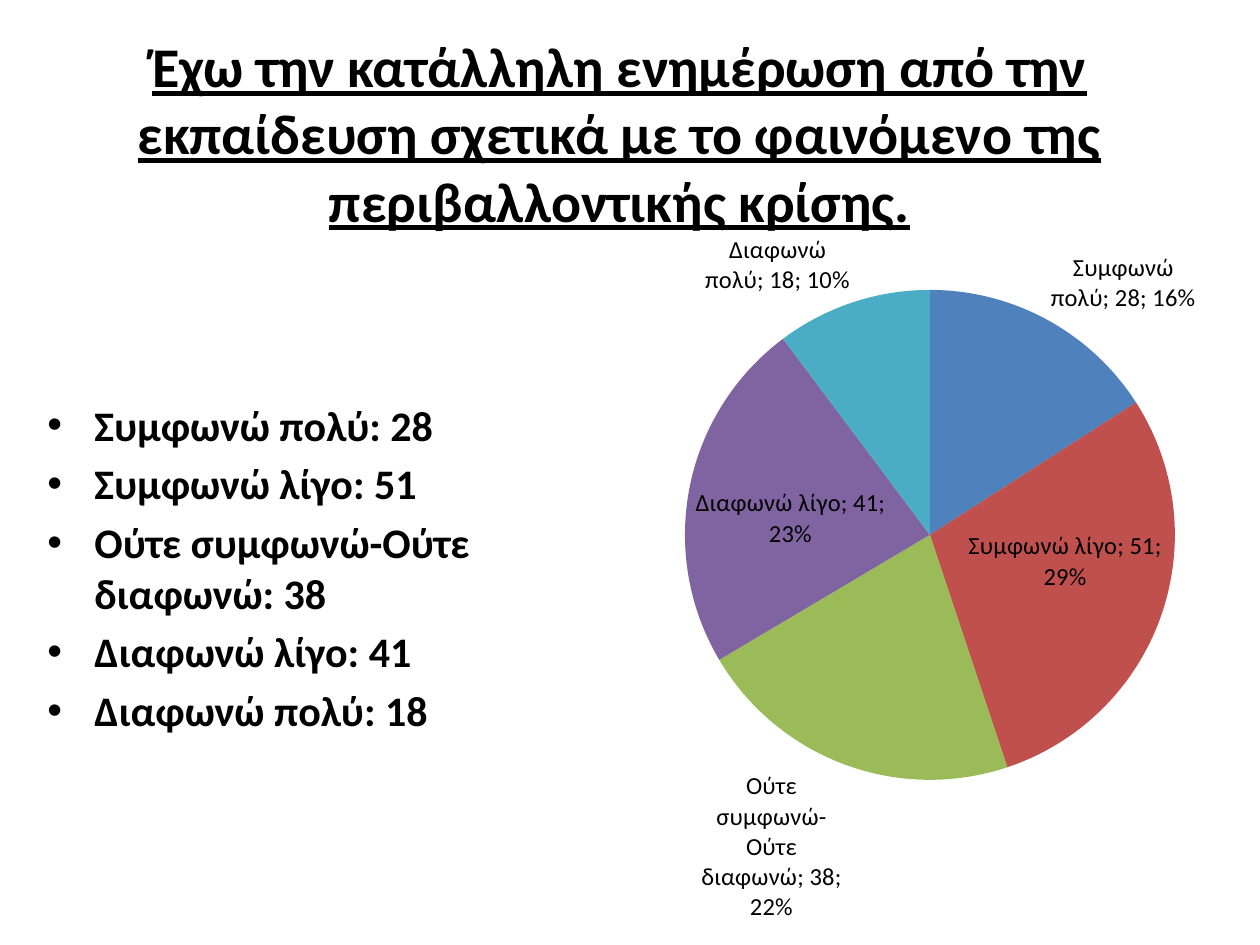
from lxml import etree
from pptx import Presentation
from pptx import util as u
from pptx.chart.data import CategoryChartData
from pptx.dml.color import RGBColor
from pptx.enum import chart as charts, text
from pptx.oxml import ns

BLACK = RGBColor(0x00, 0x00, 0x00)
SLICES = [
    RGBColor(0x4F, 0x81, 0xBD),
    RGBColor(0xC0, 0x50, 0x4D),
    RGBColor(0x9B, 0xBB, 0x59),
    RGBColor(0x80, 0x64, 0xA2),
    RGBColor(0x4B, 0xAC, 0xC6),
]
TITLE = ("Έχω την κατάλληλη ενημέρωση από την εκπαίδευση σχετικά με "
         "το φαινόμενο της περιβαλλοντικής κρίσης.")
ANSWERS = {
    "Συμφωνώ πολύ": 28,
    "Συμφωνώ λίγο": 51,
    "Ούτε συμφωνώ-Ούτε διαφωνώ": 38,
    "Διαφωνώ λίγο": 41,
    "Διαφωνώ πολύ": 18,
}


def px(length):
    """Turn px at 126 to the inch into EMU."""
    return u.Emu(round(length * 914400 / 126))


class SurveySlide:
    font = "Calibri"

    def __init__(self, deck):
        self.page = deck.slides.add_slide(deck.slide_layouts[6])

    def style(self, font, size, bold=False, underline=False):
        font.name = self.font
        font.size = u.Pt(size)
        font.bold = bold
        font.underline = underline
        font.color.rgb = BLACK

    def text_frame(self, bounds, content):
        frame = self.page.shapes.add_textbox(*map(px, bounds)).text_frame
        frame.word_wrap = True
        frame.text = content
        return frame

    def title(self, bounds, content):
        frame = self.text_frame(bounds, content)
        frame.vertical_anchor = text.MSO_ANCHOR.MIDDLE
        para = frame.paragraphs[0]
        para.alignment = text.PP_ALIGN.CENTER
        self.style(para.runs[0].font, 32, bold=True, underline=True)

    def bullets(self, bounds, lines, indent=47):
        frame = self.text_frame(bounds, "\n".join(lines))
        for para in frame.paragraphs:
            para.space_before = u.Pt(4.8)
            self.style(para.runs[0].font, 24, bold=True)
            props = para._p.get_or_add_pPr()
            props.set("marL", str(px(indent)))
            props.set("indent", str(-px(indent)))
            etree.SubElement(props, ns.qn("a:buFont"), typeface="Arial")
            etree.SubElement(props, ns.qn("a:buChar"), char="•")

    def pie(self, bounds, plot_bounds, values, colors):
        data = CategoryChartData()
        data.categories = list(values)
        data.add_series("Series 1", list(values.values()))
        chart = self.page.shapes.add_chart(
            charts.XL_CHART_TYPE.PIE, *map(px, bounds), data).chart
        chart.has_title = False
        chart.has_legend = False
        self.style(chart.font, 10)
        plot = chart.plots[0]
        plot.vary_by_categories = True
        series = plot.series[0]
        for index, color in enumerate(colors):
            fill = series.points[index].format.fill
            fill.solid()
            fill.fore_color.rgb = color
        self.pie_labels(series.data_labels)
        self.place_plot(chart, bounds, plot_bounds)

    def pie_labels(self, labels):
        self.style(labels.font, 14)
        labels.show_category_name = True
        labels.show_value = True
        labels.show_percentage = True
        labels.position = charts.XL_LABEL_POSITION.BEST_FIT
        separator = etree.Element(ns.qn("c:separator"))
        separator.text = "; "
        labels._element.find(ns.qn("c:showPercent")).getparent().find(
            ns.qn("c:showBubbleSize")).addnext(separator)

    def place_plot(self, chart, bounds, plot_bounds):
        """Fix the pie inside the chart, as fractions of the chart's size."""
        area = chart._chartSpace.find(".//" + ns.qn("c:plotArea"))
        for layout in area.findall(ns.qn("c:layout")):
            area.remove(layout)
        layout = etree.Element(ns.qn("c:layout"))
        area.insert(0, layout)
        manual = etree.SubElement(layout, ns.qn("c:manualLayout"))
        left, top, width, height = bounds
        x, y, w, h = plot_bounds
        settings = {
            "layoutTarget": "inner", "xMode": "edge", "yMode": "edge",
            "x": (x - left) / width, "y": (y - top) / height,
            "w": w / width, "h": h / height,
        }
        for name, value in settings.items():
            etree.SubElement(manual, ns.qn("c:" + name), val=str(value))


def main():
    deck = Presentation()
    deck.slide_width, deck.slide_height = px(1260), px(945)
    slide = SurveySlide(deck)
    slide.title((63, 0, 1113, 265), TITLE)
    slide.bullets((35, 393, 557, 377),
                  [f"{answer}: {count}" for answer, count in ANSWERS.items()])
    slide.pie((481, 195, 779, 750), (685, 290, 490, 490), ANSWERS, SLICES)
    deck.save("out.pptx")


if __name__ == "__main__":
    main()
